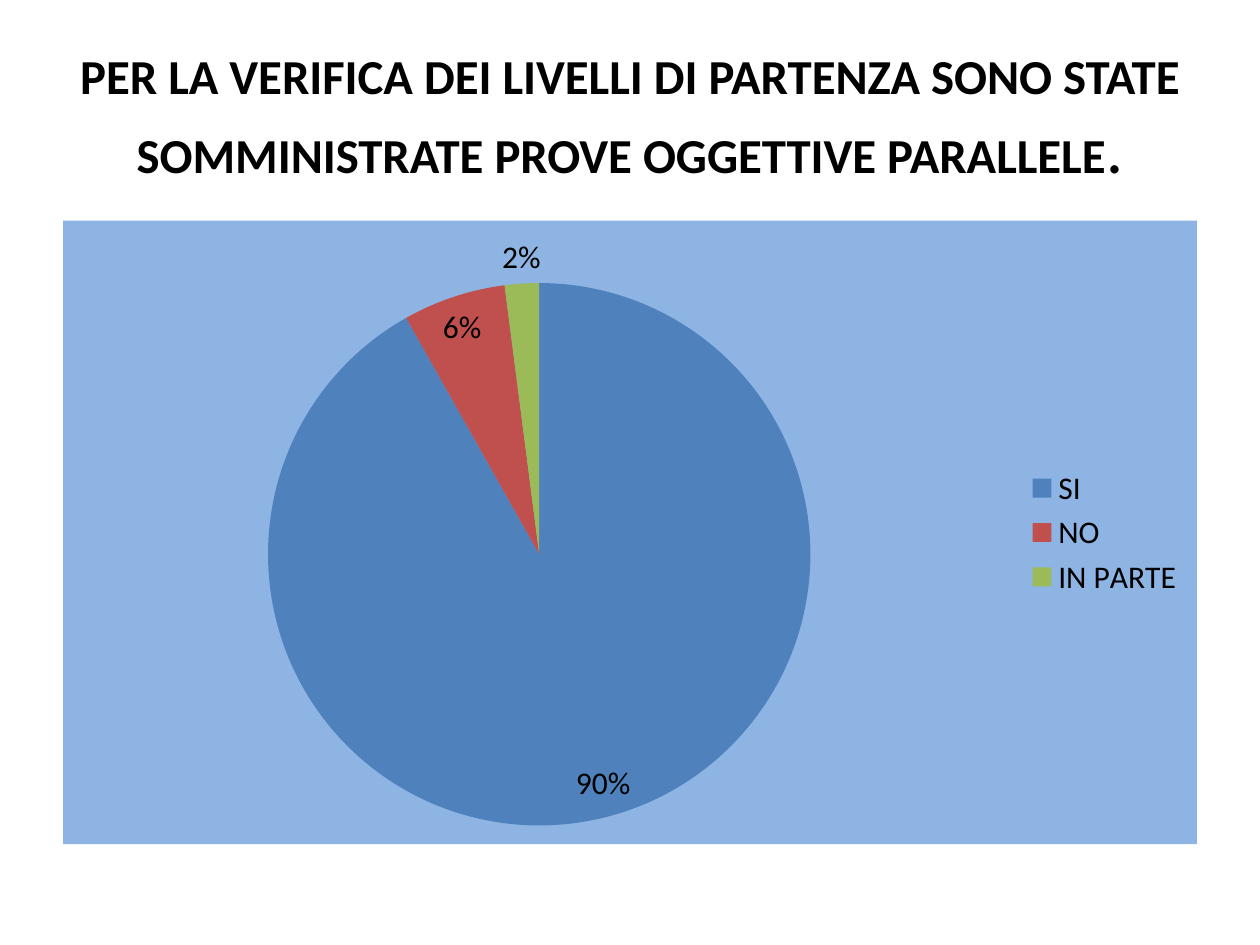
from dataclasses import dataclass

from lxml.etree import fromstring
from pptx import Presentation
from pptx.chart.chart import Chart
from pptx.chart.data import CategoryChartData
from pptx.dml.color import RGBColor
from pptx.enum.chart import XL_CHART_TYPE, XL_LABEL_POSITION, XL_LEGEND_POSITION
from pptx.enum.text import MSO_ANCHOR, MSO_AUTO_SIZE, PP_ALIGN
from pptx.oxml.ns import nsdecls
from pptx.slide import Slide
from pptx.util import Cm, Pt

FONT = "Calibri"
COLORS = {
    "text": "000000",
    "panel": "8EB4E3",
    "yes": "4F81BD",
    "no": "C0504D",
    "partly": "9BBB59",
}


@dataclass
class Answer:
    label: str
    share: float
    color: str


@dataclass
class TitlePart:
    text: str
    size: float
    bold: bool


ANSWERS = [
    Answer("SI", 0.9, "yes"),
    Answer("NO", 0.06, "no"),
    Answer("IN PARTE", 0.02, "partly"),
]
TITLE = [
    TitlePart(
        "PER LA VERIFICA DEI LIVELLI DI PARTENZA SONO STATE "
        "SOMMINISTRATE PROVE OGGETTIVE PARALLELE", 27.9, True),
    TitlePart(".", 39.6, False),
]


def rgb(name: str) -> RGBColor:
    return RGBColor.from_string(COLORS[name])


def write_title(s: Slide, parts: list[TitlePart]) -> None:
    sp = s.shapes.title
    sp.left, sp.top, sp.width, sp.height = Cm(1.27), Cm(0.76), Cm(22.86), Cm(3.18)
    tf = sp.text_frame
    tf.word_wrap = True
    tf.auto_size = MSO_AUTO_SIZE.NONE
    tf.vertical_anchor = MSO_ANCHOR.MIDDLE
    p = tf.paragraphs[0]
    p.alignment = PP_ALIGN.CENTER
    for part in parts:
        r = p.add_run()
        r.text = part.text
        r.font.name = FONT
        r.font.size = Pt(part.size)
        r.font.bold = part.bold
        r.font.color.rgb = rgb("text")


def fill_chart_area(chart: Chart, color: str) -> None:
    area = fromstring(
        f'<c:spPr {nsdecls("c", "a")}><a:solidFill><a:srgbClr val="{COLORS[color]}"/>'
        "</a:solidFill><a:ln><a:noFill/></a:ln></c:spPr>")
    chart.font._element.getparent().getparent().getparent().addprevious(area)


def place_plot(chart: Chart, x: float, y: float, w: float, h: float) -> None:
    plot_area = chart.plots[0]._element.getparent()
    for old in plot_area.xpath("c:layout"):
        plot_area.remove(old)
    sizes = "".join(f'<c:{k} val="{v}"/>' for k, v in zip("xywh", (x, y, w, h)))
    plot_area.insert(0, fromstring(
        f'<c:layout {nsdecls("c")}><c:manualLayout><c:layoutTarget val="inner"/>'
        f'<c:xMode val="edge"/><c:yMode val="edge"/>{sizes}</c:manualLayout></c:layout>'))


def add_pie(s: Slide, answers: list[Answer]) -> None:
    data = CategoryChartData(number_format="0%")
    data.categories = [a.label for a in answers]
    data.add_series("Series 1", [a.share for a in answers])
    chart = s.shapes.add_chart(
        XL_CHART_TYPE.PIE, Cm(1.27), Cm(4.45), Cm(22.86), Cm(12.57), data).chart
    chart.has_title = False
    chart.font.name = FONT
    chart.font.size = Pt(18)
    chart.font.color.rgb = rgb("text")
    chart.has_legend = True
    chart.legend.position = XL_LEGEND_POSITION.RIGHT
    chart.legend.include_in_layout = False

    plot = chart.plots[0]
    plot.vary_by_categories = True
    for i, a in enumerate(answers):
        fill = plot.series[0].points[i].format.fill
        fill.solid()
        fill.fore_color.rgb = rgb(a.color)
    plot.has_data_labels = True
    labels = plot.data_labels
    labels.show_value = True
    labels.show_percentage = False
    labels.number_format = "0%"
    labels.number_format_is_linked = False
    labels.position = XL_LABEL_POSITION.BEST_FIT

    fill_chart_area(chart, "panel")
    place_plot(chart, 0.18, 0.1, 0.48, 0.87)


def main() -> None:
    prs = Presentation()
    prs.slide_width, prs.slide_height = Cm(25.4), Cm(19.05)
    s = prs.slides.add_slide(prs.slide_layouts[5])
    write_title(s, TITLE)
    add_pie(s, ANSWERS)
    prs.save("out.pptx")


if __name__ == "__main__":
    main()
